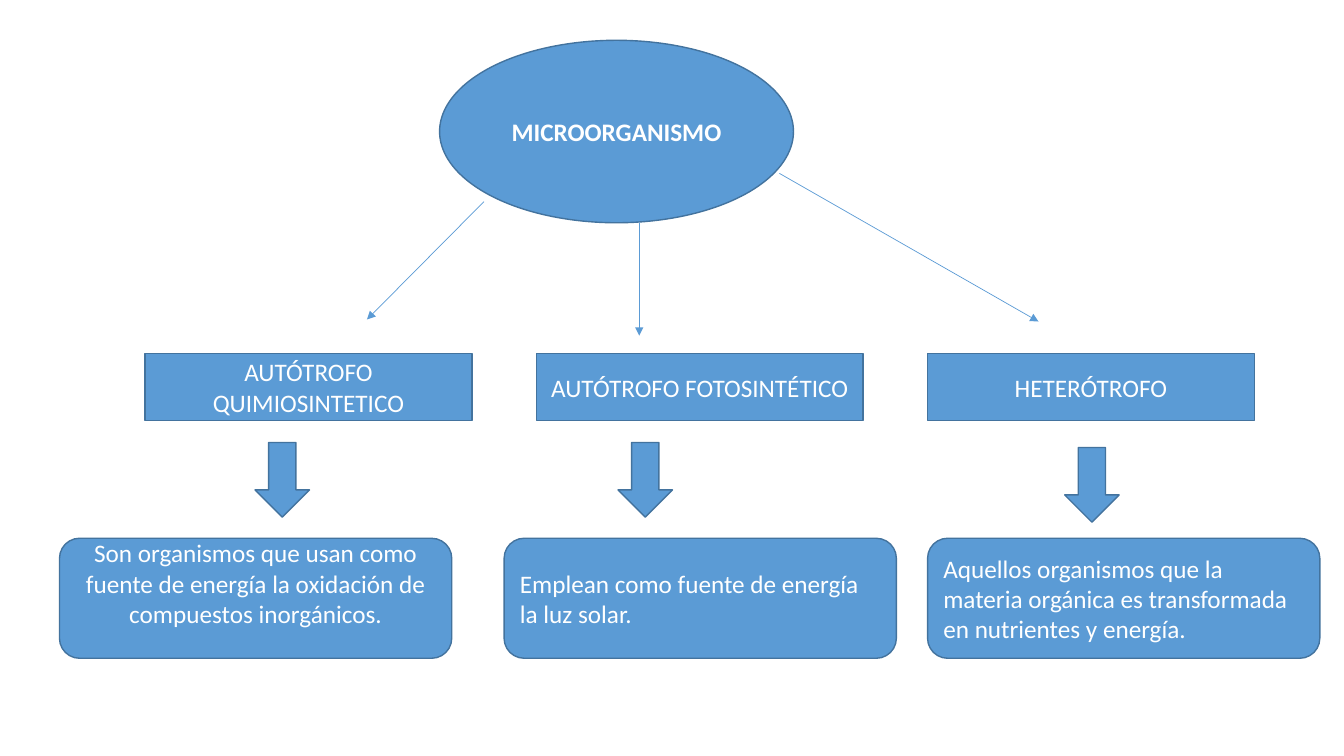
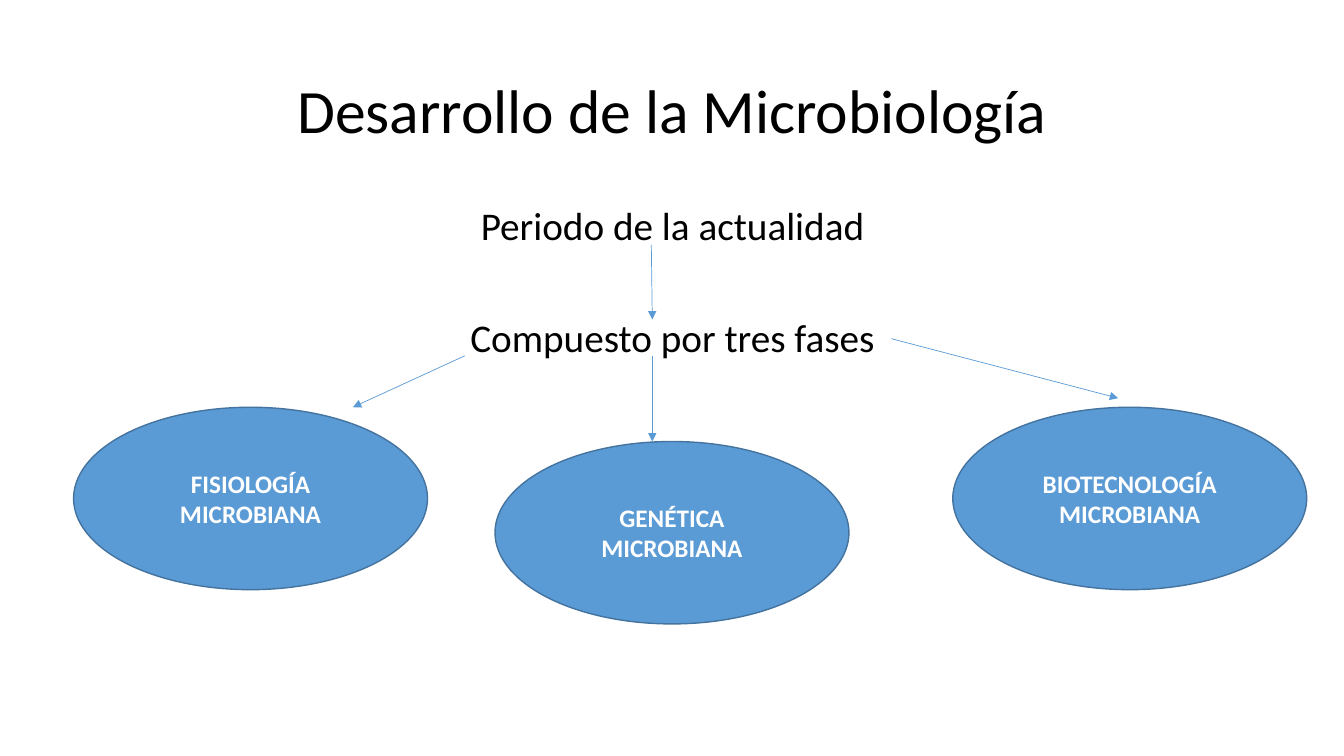
from lxml import etree
from pptx import Presentation
from pptx.dml.color import RGBColor
from pptx.enum.shapes import MSO_CONNECTOR, MSO_SHAPE as SHAPE
from pptx.enum.text import MSO_ANCHOR as ANCHOR, PP_ALIGN as ALIGN
from pptx.oxml.ns import qn
from pptx.util import Inches, Pt

COLORS = {"fill": "5B9BD5", "outline": "43739E", "light": "FFFFFF", "dark": "000000"}
COLORS = {name: RGBColor.from_string(value) for name, value in COLORS.items()}
FONT = "Calibri"
OVAL_SIZE = (3.51, 1.81)
LABEL_SIZE = (3.24, 0.66)
BLOCK_ARROW_SIZE = (0.54, 0.74)
CARD_SIZE = (3.89, 1.19)


def add_node(slide, kind, position, size, text="", bold=False, align=ALIGN.CENTER):
    """Blue shape with an outline and white text."""
    shape = slide.shapes.add_shape(kind, *map(Inches, position + size))
    shape.shadow.inherit = False
    shape.fill.solid()
    shape.fill.fore_color.rgb = COLORS["fill"]
    shape.line.color.rgb = COLORS["outline"]
    shape.line.width = Pt(1)
    if text:
        shape.text_frame.word_wrap = True
        shape.text_frame.vertical_anchor = ANCHOR.MIDDLE
        paragraph = shape.text_frame.paragraphs[0]
        paragraph.text = text
        paragraph.alignment = align
        paragraph.font.name = FONT
        paragraph.font.size = Pt(18)
        paragraph.font.bold = bold
        paragraph.font.color.rgb = COLORS["light"]
    return shape


def add_arrow(slide, start, end):
    """Thin line with a triangular head at its end."""
    arrow = slide.shapes.add_connector(MSO_CONNECTOR.STRAIGHT, *map(Inches, start + end))
    arrow.line.color.rgb = COLORS["fill"]
    arrow.line.width = Pt(0.5)
    etree.SubElement(arrow.line._get_or_add_ln(), qn("a:tailEnd"), type="triangle")
    etree.SubElement(arrow._element.spPr, qn("a:effectLst"))


presentation = Presentation()
presentation.slide_width = Inches(13.33)
presentation.slide_height = Inches(7.5)
blank_layout = presentation.slide_layouts[6]

# Slide 1: kinds of microorganism
slide = presentation.slides.add_slide(blank_layout)
add_node(slide, SHAPE.OVAL, (4.36, 0.4), OVAL_SIZE, "MICROORGANISMO", bold=True)

for start, end in [
    ((4.8, 2), (3.64, 3.17)),
    ((6.34, 2.21), (6.34, 3.33)),
    ((7.73, 1.72), (10.3, 3.19)),
]:
    add_arrow(slide, start, end)

# Columns: label, block arrow, description card
labels = ["AUTÓTROFO QUIMIOSINTETICO", "AUTÓTROFO FOTOSINTÉTICO", "HETERÓTROFO"]
for index, label in enumerate(labels):
    add_node(slide, SHAPE.RECTANGLE, (1.44 + 3.88 * index, 3.51), LABEL_SIZE, label)

for position in [(2.53, 4.39), (6.13, 4.39), (10.56, 4.44)]:
    add_node(slide, SHAPE.DOWN_ARROW, position, BLOCK_ARROW_SIZE)

cards = [
    (0.59, ALIGN.CENTER, 0.35,
     "Son organismos que usan como fuente de energía la oxidación de compuestos inorgánicos."),
    (5, ALIGN.LEFT, 0.05, "Emplean como fuente de energía la luz solar."),
    (9.2, ALIGN.LEFT, 0.05,
     "Aquellos organismos que la materia orgánica es transformada en nutrientes y energía."),
]
for left, align, bottom_margin, text in cards:
    card = add_node(slide, SHAPE.ROUNDED_RECTANGLE, (left, 5.34), CARD_SIZE, text, align=align)
    card.text_frame.margin_bottom = Inches(bottom_margin)

# Slide 2: development of microbiology
slide = presentation.slides.add_slide(blank_layout)

# Title and body text
for top, height, anchor, size, lines in [
    (0.4, 1.45, ANCHOR.MIDDLE, 44, ["Desarrollo de la Microbiología"]),
    (2, 4.76, ANCHOR.TOP, 28, ["Periodo de la actualidad", "Compuesto por tres fases"]),
]:
    box = slide.shapes.add_textbox(Inches(0.92), Inches(top), Inches(11.5), Inches(height))
    frame = box.text_frame
    frame.word_wrap = True
    frame.vertical_anchor = anchor
    for index, line in enumerate(lines):
        paragraph = frame.add_paragraph() if index else frame.paragraphs[0]
        paragraph.text = line
        paragraph.alignment = ALIGN.CENTER
        paragraph.line_spacing = 0.9
        paragraph.space_before = Pt(50 * index)
        paragraph.font.name = FONT
        paragraph.font.size = Pt(size)
        paragraph.font.color.rgb = COLORS["dark"]

# The three phases
for position, phase in [
    ((0.73, 4.04), "FISIOLOGÍA MICROBIANA"),
    ((4.91, 4.38), "GENÉTICA MICROBIANA"),
    ((9.45, 4.04), "BIOTECNOLOGÍA MICROBIANA"),
]:
    add_node(slide, SHAPE.OVAL, position, OVAL_SIZE, phase, bold=True)

for start, end in [
    ((6.46, 2.43), (6.47, 3.17)),
    ((4.61, 3.53), (3.5, 4.04)),
    ((6.47, 3.53), (6.47, 4.38)),
    ((8.84, 3.36), (11.09, 3.95)),
]:
    add_arrow(slide, start, end)

presentation.save("out.pptx")
